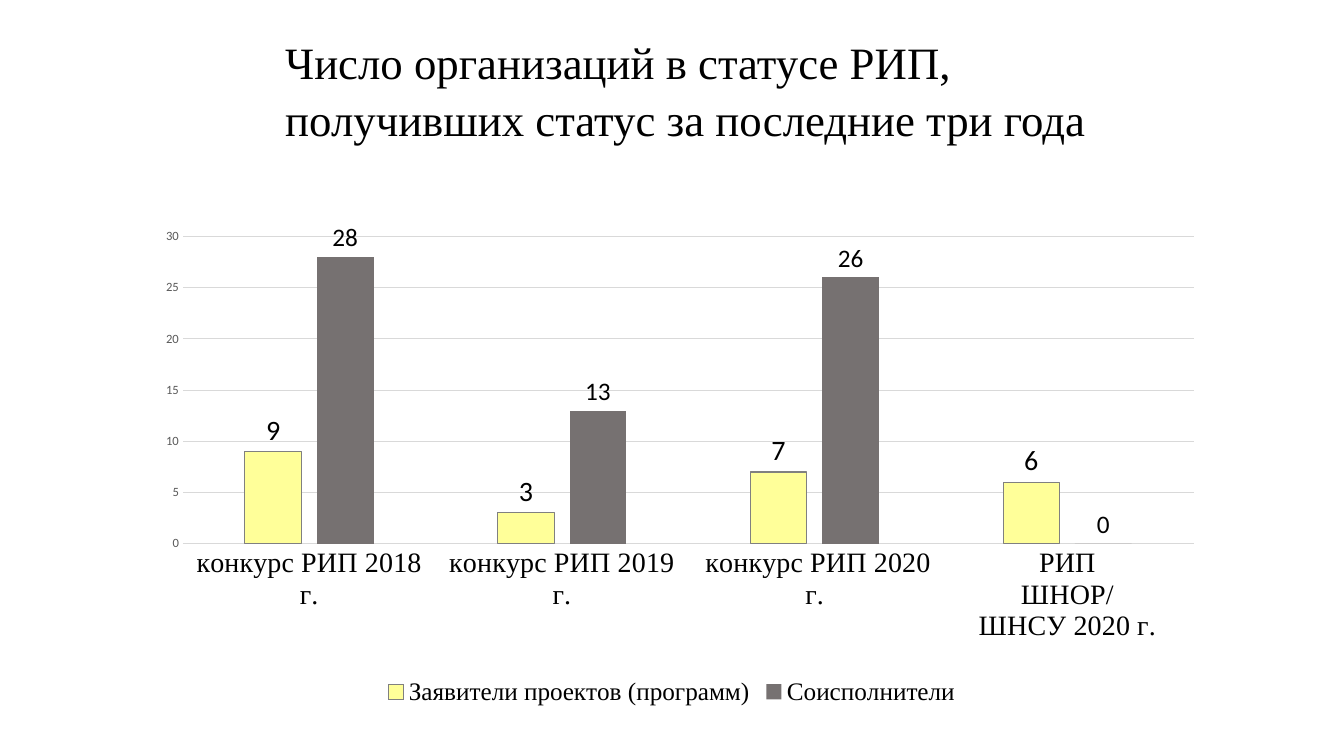
from dataclasses import dataclass

from lxml import etree
from pptx import Presentation
from pptx.chart.data import CategoryChartData
from pptx.dml.color import RGBColor
from pptx.enum.chart import (
    XL_CHART_TYPE, XL_LABEL_POSITION, XL_LEGEND_POSITION, XL_TICK_MARK)
from pptx.enum.text import MSO_ANCHOR, PP_ALIGN
from pptx.oxml.ns import qn
from pptx.util import Pt

COLUMNS = XL_CHART_TYPE.COLUMN_CLUSTERED
OUTSIDE = XL_LABEL_POSITION.OUTSIDE_END
BOTTOM = XL_LEGEND_POSITION.BOTTOM
NO_TICK = XL_TICK_MARK.NONE
MIDDLE = MSO_ANCHOR.MIDDLE
LEFT = PP_ALIGN.LEFT


@dataclass(frozen=True)
class Theme:
    serif: str = "Times New Roman"
    sans: str = "Calibri"
    ink: str = "000000"
    muted: str = "595959"
    grid: str = "D9D9D9"
    edge: str = "808080"
    lead: str = "FFFF99"
    partner: str = "767171"
    title: int = 32
    large: int = 20
    medium: int = 18
    base: int = 10
    small: int = 9
    hair: float = 0.75


THEME = Theme()
TITLE = "Число организаций в статусе РИП, получивших статус за последние три года"
GROUPS = ["конкурс РИП 2018 г.", "конкурс РИП 2019 г.",
          " конкурс РИП 2020 г.", "РИП ШНОР/ШНСУ 2020 г."]
# name, values, fill, outline, label size
SERIES = [
    ("Заявители проектов (программ)", (9, 3, 7, 6),
     THEME.lead, THEME.edge, THEME.large),
    ("Соисполнители", (28, 13, 26, 0),
     THEME.partner, None, THEME.medium),
]
PLOT = {"x": 0.06, "y": 0.09, "w": 0.91, "h": 0.59}


def set_font(font, face, size, color=THEME.ink):
    font.name = face
    font.size = Pt(size)
    font.bold = False
    font.color.rgb = RGBColor.from_string(color)


def set_line(line, color):
    if color is None:
        line.fill.background()
    else:
        line.color.rgb = RGBColor.from_string(color)
        line.width = Pt(THEME.hair)


def add_title(slide):
    title = slide.shapes.title
    title.left, title.top = Pt(196.5), Pt(21)
    title.width, title.height = Pt(612), Pt(85)
    frame = title.text_frame
    frame.word_wrap = True
    frame.vertical_anchor = MIDDLE
    para = frame.paragraphs[0]
    para.alignment = LEFT
    para.line_spacing = 1.05
    run = para.add_run()
    run.text = TITLE
    set_font(run.font, THEME.serif, THEME.title)


def place_plot(chart):
    """Fix the inner plot area as fractions of the chart frame."""
    area = chart.plots[0]._element.getparent()
    for old in area.findall(qn("c:layout")):
        area.remove(old)
    layout = etree.Element(qn("c:layout"))
    area.insert(0, layout)
    manual = etree.SubElement(layout, qn("c:manualLayout"))
    parts = {"layoutTarget": "inner", "xMode": "edge", "yMode": "edge", **PLOT}
    for name, val in parts.items():
        etree.SubElement(manual, qn(f"c:{name}")).set("val", str(val))


def style_axes(chart):
    groups, scale = chart.category_axis, chart.value_axis
    for axis in (groups, scale):
        axis.major_tick_mark = axis.minor_tick_mark = NO_TICK
    set_font(groups.tick_labels.font, THEME.serif, THEME.large)
    set_line(groups.format.line, THEME.grid)
    set_font(scale.tick_labels.font, THEME.sans, THEME.small, THEME.muted)
    set_line(scale.format.line, None)
    set_line(scale.major_gridlines.format.line, THEME.grid)
    scale.minimum_scale, scale.maximum_scale, scale.major_unit = 0, 30, 5


def style_series(series, fill, edge, size):
    series.format.fill.solid()
    series.format.fill.fore_color.rgb = RGBColor.from_string(fill)
    set_line(series.format.line, edge)
    series.invert_if_negative = False
    labels = series.data_labels
    labels.show_value = True
    labels.position = OUTSIDE
    set_font(labels.font, THEME.sans, size)


def add_legend(chart):
    chart.has_legend = True
    chart.legend.position = BOTTOM
    chart.legend.include_in_layout = False
    set_font(chart.legend.font, THEME.serif, THEME.medium)


def add_columns(slide):
    data = CategoryChartData()
    data.categories = GROUPS
    for name, vals, *_ in SERIES:
        data.add_series(name, vals)
    chart = slide.shapes.add_chart(
        COLUMNS, Pt(83), Pt(135.5), Pt(793.5), Pt(372), data).chart
    chart.has_title = False
    set_font(chart.font, THEME.sans, THEME.base)
    plot = chart.plots[0]
    plot.gap_width, plot.overlap = 219, -27
    plot.vary_by_categories = False
    for series, (_, _, *look) in zip(plot.series, SERIES):
        style_series(series, *look)
    style_axes(chart)
    add_legend(chart)
    place_plot(chart)


def main():
    deck = Presentation()
    deck.slide_width, deck.slide_height = Pt(960), Pt(540)
    slide = deck.slides.add_slide(deck.slide_layouts[5])
    add_title(slide)
    add_columns(slide)
    deck.save("out.pptx")


if __name__ == "__main__":
    main()
